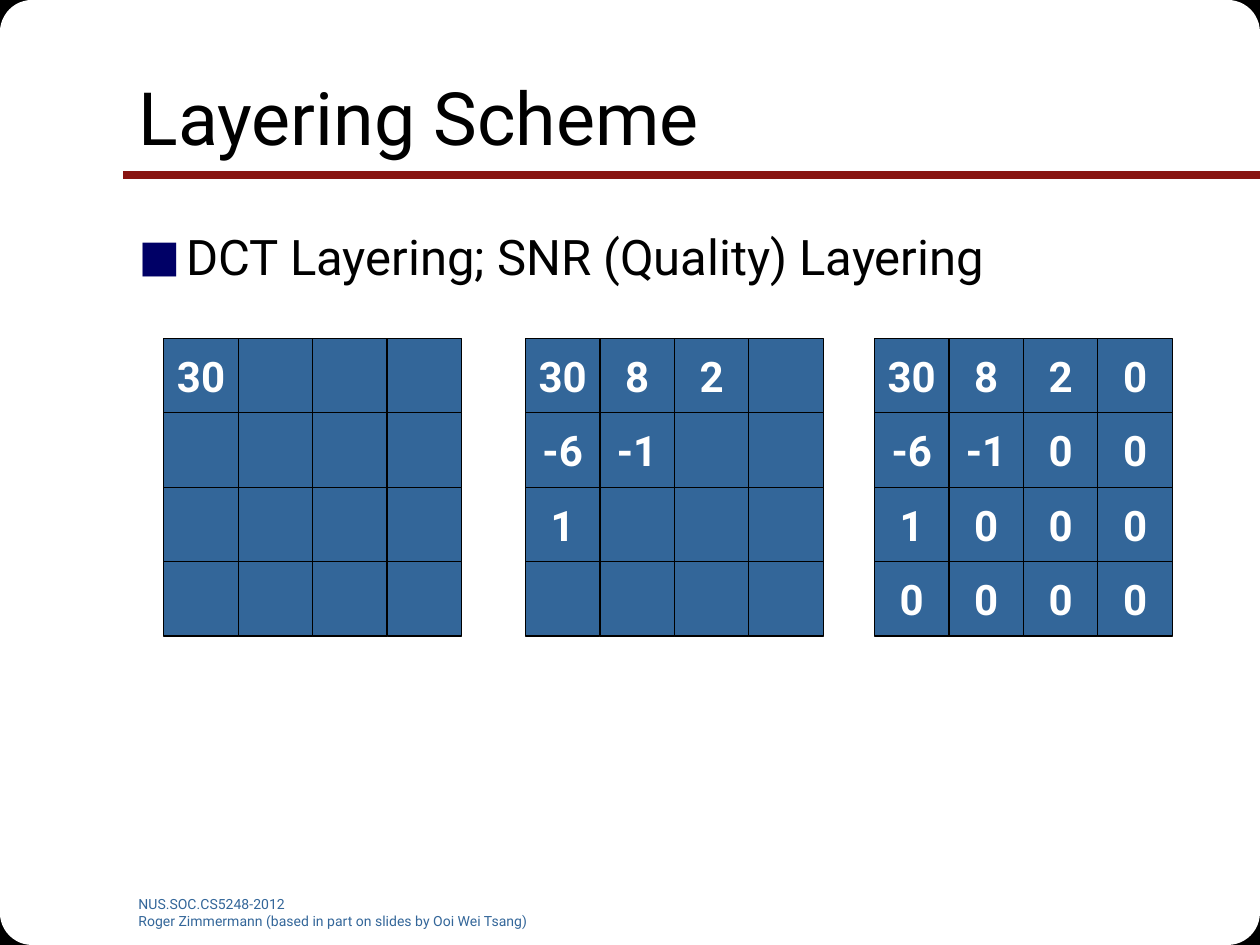
from dataclasses import dataclass
from itertools import product

from lxml import etree
from pptx import Presentation
from pptx.dml.color import RGBColor
from pptx.enum.shapes import MSO_CONNECTOR, MSO_SHAPE
from pptx.enum.text import MSO_ANCHOR, MSO_AUTO_SIZE, PP_ALIGN
from pptx.oxml.ns import qn
from pptx.util import Inches, Pt

RECT, ROUND = MSO_SHAPE.RECTANGLE, MSO_SHAPE.ROUNDED_RECTANGLE
LINE = MSO_CONNECTOR.STRAIGHT
LEFT, CENTER = PP_ALIGN.LEFT, PP_ALIGN.CENTER
TOP, MIDDLE = MSO_ANCHOR.TOP, MSO_ANCHOR.MIDDLE
WIDE, HIGH = 10, 7.5


@dataclass(frozen=True)
class Theme:
    font: str = "Roboto"
    black: str = "000000"
    white: str = "FFFFFF"
    blue: str = "336699"
    red: str = "891411"
    navy: str = "000066"
    title: float = 42
    body: float = 28
    cell: float = 24
    foot: float = 8
    thin: float = 0.75
    thick: float = 4.5


@dataclass(frozen=True)
class Grid:
    left: float
    rows: tuple[str, ...]  # values by row; missing ones stay blank


THEME = Theme()
GRIDS = (
    Grid(1.3, ("30",)),
    Grid(4.17, ("30 8 2", "-6 -1", "1")),
    Grid(6.94, ("30 8 2 0", "-6 -1 0 0", "1 0 0 0", "0 0 0 0")),
)
GRID_TOP, CELL, COUNT = 2.685, 0.591, 4


def rgb(code: str) -> RGBColor:
    return RGBColor.from_string(code)


def write(frame, text: str, *, size: float, color: str, bold: bool = False,
          align=LEFT, anchor=TOP, wrap: bool = True) -> None:
    """Fill a text frame, one paragraph to a line."""
    frame.text = text
    frame.word_wrap = wrap
    frame.auto_size = MSO_AUTO_SIZE.NONE
    frame.vertical_anchor = anchor
    for para in frame.paragraphs:
        para.alignment = align
        for run in para.runs:
            font = run.font
            font.name, font.size, font.bold = THEME.font, Pt(size), bold
            font.color.rgb = rgb(color)


def place(shape, left: float, top: float, width: float, height: float) -> None:
    shape.left, shape.top = Inches(left), Inches(top)
    shape.width, shape.height = Inches(width), Inches(height)


def block(slide, kind, left: float, top: float, width: float, height: float,
          fill: str, edge: str | None = None):
    shape = slide.shapes.add_shape(
        kind, Inches(left), Inches(top), Inches(width), Inches(height))
    shape.shadow.inherit = False
    shape.fill.solid()
    shape.fill.fore_color.rgb = rgb(fill)
    if edge:
        shape.line.color.rgb = rgb(edge)
        shape.line.width = Pt(THEME.thin)
    else:
        shape.line.fill.background()
    return shape


def corners(slide, kind, width: float, height: float, fill: str,
            edge: str | None = None) -> None:
    for left, top in product((0, WIDE - width), (0, HIGH - height)):
        block(slide, kind, left, top, width, height, fill, edge)


def rule(slide, left: float, right: float, top: float) -> None:
    line = slide.shapes.add_connector(
        LINE, Inches(left), Inches(top), Inches(right), Inches(top))
    line.line.color.rgb = rgb(THEME.red)
    line.line.width = Pt(THEME.thick)
    etree.SubElement(line._element.spPr, qn("a:effectLst"))


def bullet(para) -> None:
    """Give a paragraph a square navy bullet and a hanging indent."""
    props = para._p.get_or_add_pPr()
    props.set("marL", str(Inches(0.38)))
    props.set("indent", str(-Inches(0.38)))
    color = etree.SubElement(props, qn("a:buClr"))
    etree.SubElement(color, qn("a:srgbClr"), val=THEME.navy)
    etree.SubElement(props, qn("a:buSzPct"), val="90000")
    etree.SubElement(props, qn("a:buFont"), typeface=THEME.font)
    etree.SubElement(props, qn("a:buChar"), char="■")


def draw(slide, grid: Grid) -> None:
    values = [row.split() for row in grid.rows]
    for row, col in product(range(COUNT), repeat=2):
        cell = block(slide, RECT, grid.left + col * CELL, GRID_TOP + row * CELL,
                     CELL, CELL, THEME.blue, THEME.black)
        if row < len(values) and col < len(values[row]):
            write(cell.text_frame, values[row][col], size=THEME.cell,
                  color=THEME.white, bold=True, align=CENTER, anchor=MIDDLE,
                  wrap=False)


def main() -> None:
    deck = Presentation()
    deck.slide_width, deck.slide_height = Inches(WIDE), Inches(HIGH)
    slide = deck.slides.add_slide(deck.slide_layouts[1])
    title, body = slide.shapes.title, slide.placeholders[1]

    # Rounded frame and title rule
    corners(slide, RECT, 0.43, 0.44, THEME.black, THEME.black)
    corners(slide, ROUND, 1.53, 1.53, THEME.white)
    rule(slide, 0.98, WIDE, 1.39)

    # Footer
    foot = slide.shapes.add_textbox(
        Inches(1), Inches(7.06), Inches(3.58), Inches(0.28))
    write(foot.text_frame, "NUS.SOC.CS5248-2012\n"
          "Roger Zimmermann (based in part on slides by Ooi Wei Tsang)",
          size=THEME.foot, color=THEME.blue)

    # Title and list, raised above the frame
    place(title, 1, 0.3, 8.5, 1.25)
    write(title.text_frame, "Layering Scheme", size=THEME.title,
          color=THEME.black, anchor=MIDDLE)
    place(body, 1, 1.75, 8.25, 4.95)
    write(body.text_frame, "DCT Layering; SNR (Quality) Layering",
          size=THEME.body, color=THEME.black)
    bullet(body.text_frame.paragraphs[0])
    for holder in (title, body):
        slide.shapes._spTree.append(holder._element)

    # Coefficient grids, one for each layer
    for grid in GRIDS:
        draw(slide, grid)

    deck.save("out.pptx")


if __name__ == "__main__":
    main()
